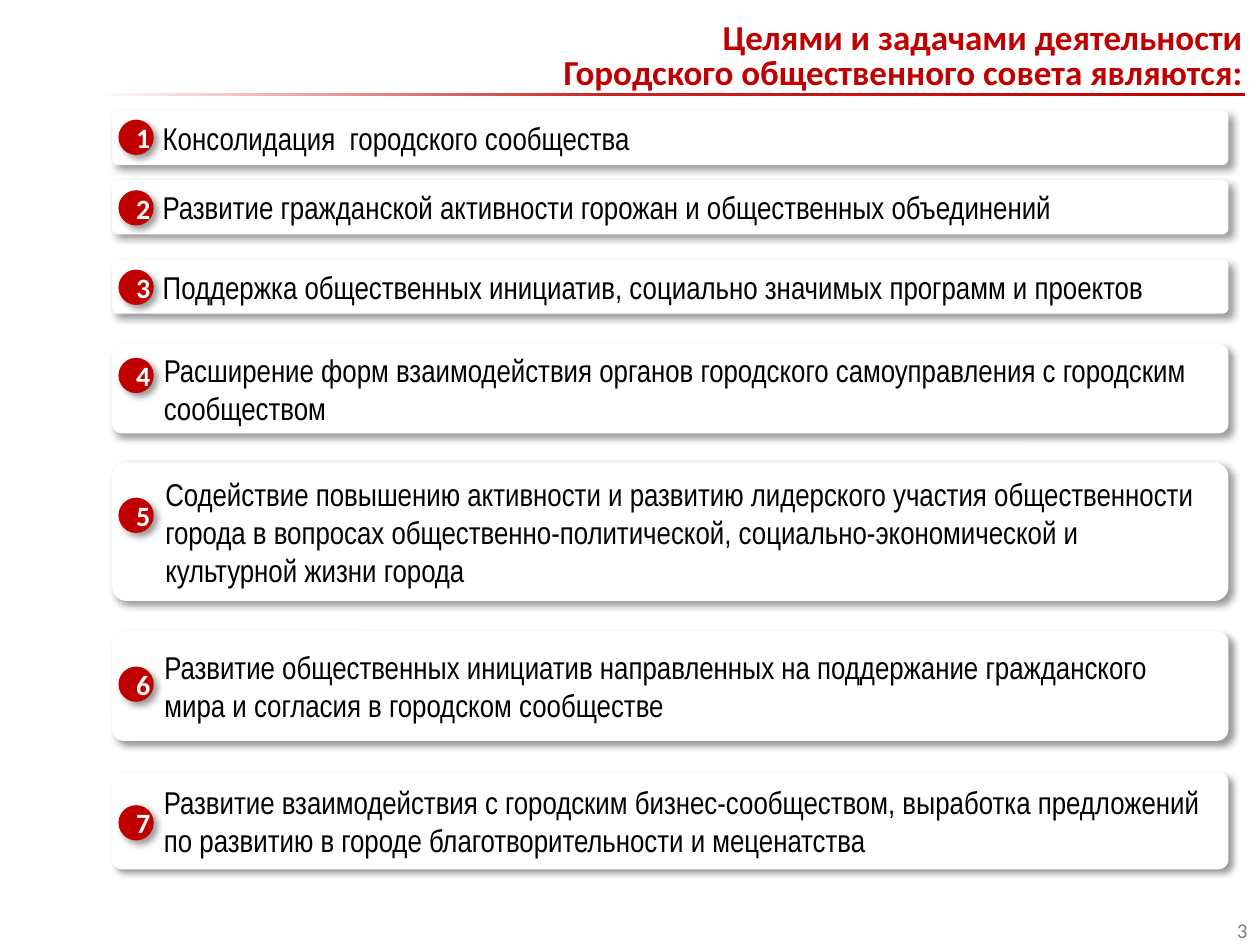
from copy import deepcopy

from lxml import etree
from pptx import Presentation
from pptx.dml.color import RGBColor
from pptx.enum.shapes import MSO_SHAPE
from pptx.enum.text import MSO_ANCHOR, PP_ALIGN
from pptx.oxml.ns import qn
from pptx.util import Inches, Pt

RECT = MSO_SHAPE.RECTANGLE
ROUND = MSO_SHAPE.ROUNDED_RECTANGLE
OVAL = MSO_SHAPE.OVAL
LEFT, CENTER, RIGHT = PP_ALIGN.LEFT, PP_ALIGN.CENTER, PP_ALIGN.RIGHT
MIDDLE = MSO_ANCHOR.MIDDLE

COLORS = {
    "white": "FFFFFF",
    "red": "C00000",
    "light_red": "C82222",
    "black": "000000",
    "gray": "808080",
}

TITLE = [
    "Целями и задачами деятельности",
    "Городского общественного совета являются:",
]

# top, height, badge offset, text
GOALS = [
    (0.88, 0.43, 0.07, "Консолидация  городского сообщества"),
    (1.43, 0.43, 0.08, "Развитие гражданской активности горожан и общественных объединений"),
    (2.06, 0.43, 0.08, "Поддержка общественных инициатив, социально значимых программ и проектов"),
    (2.73, 0.71, 0.11, "Расширение форм взаимодействия органов городского самоуправления "
                       "с городским сообществом"),
    (3.67, 1.1, 0.28, "Содействие повышению активности и развитию лидерского участия "
                      "общественности города в вопросах общественно-политической, "
                      "социально-экономической и культурной жизни города"),
    (5.01, 0.87, 0.28, "Развитие общественных инициатив направленных на поддержание "
                       "гражданского мира и согласия в городском сообществе"),
    (6.13, 0.77, 0.26, "Развитие взаимодействия с городским бизнес-сообществом, выработка "
                       "предложений по развитию в городе благотворительности и меценатства"),
]


def rgb(name):
    return RGBColor.from_string(COLORS[name])


def write(sp, lines, font="Calibri", size=18, color="black", bold=False,
          align=LEFT, spacing=None, indent=0):
    tf = sp.text_frame
    tf.word_wrap = True
    for i, line in enumerate(lines):
        p = tf.add_paragraph() if i else tf.paragraphs[0]
        p.alignment = align
        if spacing:
            p.line_spacing = Pt(spacing)
        if indent:
            pPr = p._p.get_or_add_pPr()
            pPr.set("marL", str(Inches(indent)))
            pPr.set("indent", "0")
        r = p.add_run()
        r.text = line
        r.font.name = font
        r.font.size = Pt(size)
        r.font.bold = bold
        r.font.color.rgb = rgb(color)


def add_shadow(sp):
    effects = sp._element.spPr.find(qn("a:effectLst"))
    shadow = etree.SubElement(effects, qn("a:outerShdw"), blurRad=str(Pt(4)),
                              dist=str(Pt(3)), dir="2700000", algn="tl",
                              rotWithShape="0")
    color = etree.SubElement(shadow, qn("a:srgbClr"), val=COLORS["black"])
    etree.SubElement(color, qn("a:alpha"), val="40000")


def add_block(slide, kind, x, y, w, h, color):
    sp = slide.shapes.add_shape(kind, Inches(x), Inches(y), Inches(w), Inches(h))
    sp.shadow.inherit = False
    sp.fill.solid()
    sp.fill.fore_color.rgb = rgb(color)
    sp.line.fill.background()
    sp.text_frame.vertical_anchor = MIDDLE
    return sp


def add_title(slide, x, y, w, h):
    sp = slide.shapes.add_textbox(Inches(x), Inches(y), Inches(w), Inches(h))
    write(sp, TITLE, size=20, color="red", bold=True, align=RIGHT, spacing=20)


def add_rule(slide, x, y, w, h):
    sp = add_block(slide, RECT, x, y, w, h, "red")
    sp.fill.gradient()
    sp.fill.gradient_angle = 0
    stop_list = sp._element.spPr.find(".//" + qn("a:gsLst"))
    stop_list.insert(1, deepcopy(stop_list[0]))
    colors = [(0, "white"), (0.45, "light_red"), (1, "red")]
    for stop, (position, color) in zip(sp.fill.gradient_stops, colors):
        stop.position = position
        stop.color.rgb = rgb(color)


def add_goal(slide, x, y, w, h, number, badge_offset, text):
    card = add_block(slide, ROUND, x, y, w, h, "white")
    card.adjustments[0] = 0.104
    add_shadow(card)
    write(card, [text], font="Arial Narrow", indent=0.29)
    badge = add_block(slide, OVAL, x + 0.05, y + badge_offset, 0.28, 0.28, "red")
    add_shadow(badge)
    write(badge, [str(number)], size=16, color="white", bold=True, align=CENTER)


def add_page_number(slide, x, y, w, h):
    sp = slide.shapes.add_textbox(Inches(x), Inches(y), Inches(w), Inches(h))
    write(sp, ["3"], size=12, color="gray", align=RIGHT)


def main():
    prs = Presentation()
    prs.slide_width, prs.slide_height = Inches(10), Inches(7.5)
    slide = prs.slides.add_slide(prs.slide_layouts[6])
    add_page_number(slide, 8.62, 7.23, 1.38, 0.3)
    add_title(slide, 0.75, 0.13, 9.21, 0.68)
    add_rule(slide, 0.75, 0.74, 9.13, 0.02)
    for number, (top, height, badge_offset, text) in enumerate(GOALS, 1):
        add_goal(slide, 0.89, top, 8.86, height, number, badge_offset, text)
    prs.save("out.pptx")


if __name__ == "__main__":
    main()
